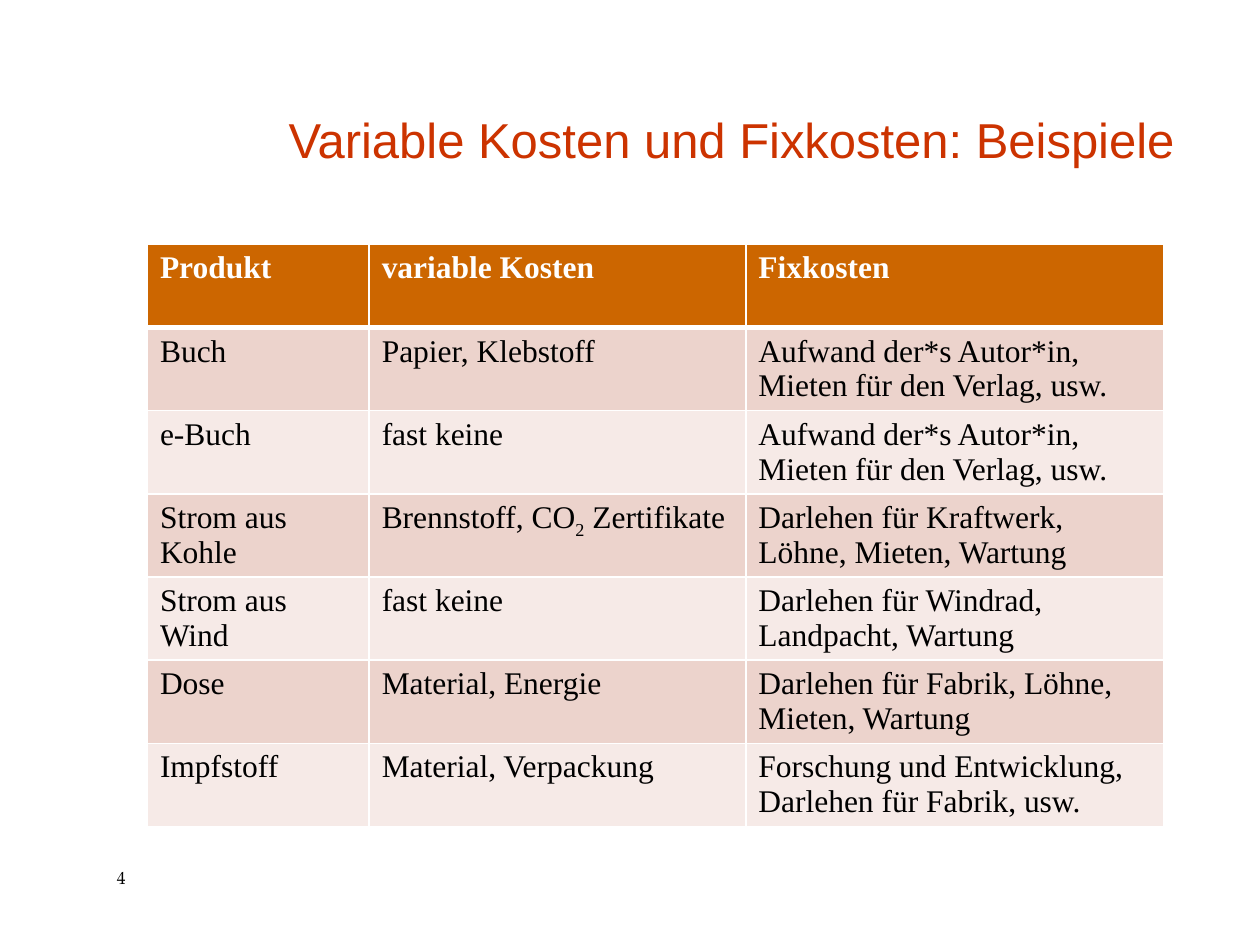
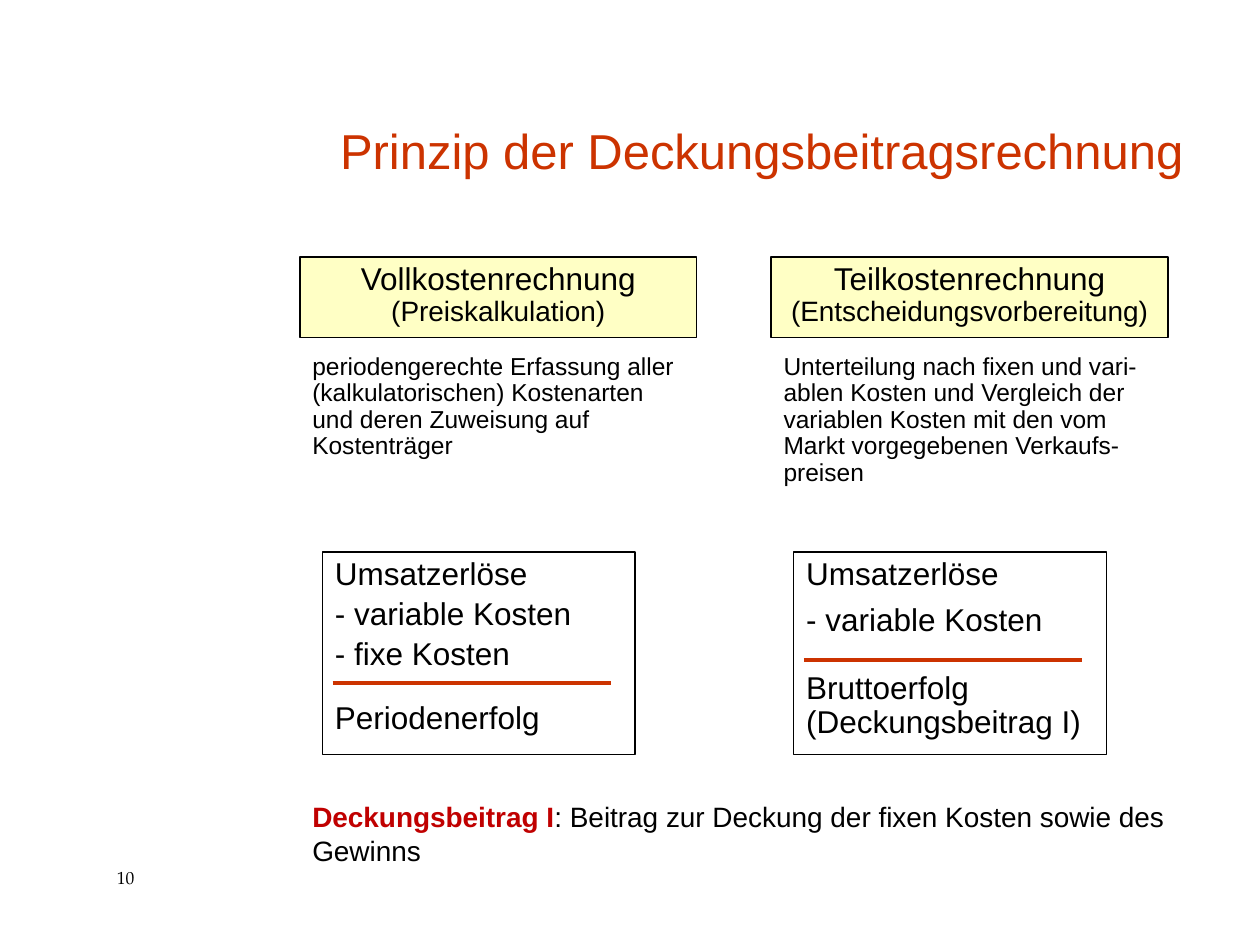
from lxml import etree
from pptx import Presentation
from pptx.dml.color import RGBColor
from pptx.enum.shapes import MSO_CONNECTOR, MSO_SHAPE
from pptx.enum.text import MSO_ANCHOR, MSO_AUTO_SIZE, PP_ALIGN
from pptx.oxml.ns import qn
from pptx.util import Inches, Pt

LEFT, CENTER, RIGHT = PP_ALIGN.LEFT, PP_ALIGN.CENTER, PP_ALIGN.RIGHT
TOP, BOTTOM = MSO_ANCHOR.TOP, MSO_ANCHOR.BOTTOM

SANS, SERIF, NUMBER_FONT = "Arial", "Times New Roman", "TeX Gyre Pagella"
BLACK, WHITE, ACCENT, KEYWORD = "000000", "FFFFFF", "CC3300", "C00000"
HEADER_FILL, BAND_FILLS, HEADING_FILL = "CC6600", ("ECD3CC", "F6EAE7"), "FFFFC5"

# Slide 1: cost examples; a cell is a string or a list of (text, is subscript)
COST_TITLE = "Variable Kosten und Fixkosten: Beispiele"
COST_COLUMNS = [1.76, 2.99, 3.32]
COST_ROW_HEIGHT = 0.66
COST_ROWS = [
    ("Produkt", "variable Kosten", "Fixkosten"),
    ("Buch", "Papier, Klebstoff", "Aufwand der*s Autor*in, Mieten für den Verlag, usw."),
    ("e-Buch", "fast keine", "Aufwand der*s Autor*in, Mieten für den Verlag, usw."),
    ("Strom aus Kohle", [("Brennstoff, CO", False), ("2", True), (" Zertifikate", False)],
     "Darlehen für Kraftwerk, Löhne, Mieten, Wartung"),
    ("Strom aus Wind", "fast keine", "Darlehen für Windrad, Landpacht, Wartung"),
    ("Dose", "Material, Energie", "Darlehen für Fabrik, Löhne, Mieten, Wartung"),
    ("Impfstoff", "Material, Verpackung", "Forschung und Entwicklung, Darlehen für Fabrik, usw."),
]

# Slide 2: two accounting methods side by side; steps are (text, space before in points)
METHOD_TITLE = "Prinzip der Deckungsbeitragsrechnung"
METHODS = [
    {"name": "Vollkostenrechnung", "purpose": "(Preiskalkulation)",
     "description": "periodengerechte Erfassung aller (kalkulatorischen) Kostenarten "
                    "und deren Zuweisung auf Kostenträger",
     "steps": [("Umsatzerlöse", 0), ("- variable Kosten", 3.6), ("- fixe Kosten", 3.6),
               ("Periodenerfolg", 16.6)],
     "rule_top": 5.42},
    {"name": "Teilkostenrechnung", "purpose": "(Entscheidungsvorbereitung)",
     "description": "Unterteilung nach fixen und vari-ablen Kosten und Vergleich der "
                    "variablen Kosten mit den vom Markt vorgegebenen Verkaufs-preisen",
     "steps": [("Umsatzerlöse", 0), ("- variable Kosten", 7.2),
               ("Bruttoerfolg (Deckungsbeitrag I)", 18.9)],
     "rule_top": 5.24},
]
METHOD_LEFT, METHOD_PITCH, METHOD_WIDTH = 2.38, 3.74, 3.15
DEFINITION = ("Deckungsbeitrag I", ": Beitrag zur Deckung der fixen Kosten sowie des Gewinns")


def rgb(color):
    return RGBColor.from_string(color)


def add_span(para, text, size, font=SANS, color=BLACK, bold=False):
    span = para.add_run()
    span.text = text
    span.font.size = Pt(size)
    span.font.name = font
    span.font.bold = bold
    span.font.color.rgb = rgb(color)
    return span


def place(shape, left, top, width, height):
    shape.left, shape.top = Inches(left), Inches(top)
    shape.width, shape.height = Inches(width), Inches(height)


def prepare_frame(shape, anchor=TOP):
    frame = shape.text_frame
    frame.word_wrap = True
    frame.auto_size = MSO_AUTO_SIZE.NONE
    frame.vertical_anchor = anchor
    return frame


def style_para(para, align=LEFT, before=0, spacing=0.9):
    para.alignment = align
    para.line_spacing = spacing
    para.space_before = Pt(before)
    return para


def add_text_box(page, left, top, width, height):
    """Add a wrapping text box and return its first paragraph."""
    box = page.shapes.add_textbox(*map(Inches, (left, top, width, height)))
    return prepare_frame(box).paragraphs[0]


def add_outlined_box(page, left, top, width, height, fill=None):
    """Add a thin black rectangle and return its text frame."""
    box = page.shapes.add_shape(MSO_SHAPE.RECTANGLE, *map(Inches, (left, top, width, height)))
    box.shadow.inherit = False
    if fill:
        box.fill.solid()
        box.fill.fore_color.rgb = rgb(fill)
    else:
        box.fill.background()
    box.line.color.rgb = rgb(BLACK)
    box.line.width = Pt(0.75)
    return prepare_frame(box)


def add_rule(page, left, top, width):
    rule = page.shapes.add_connector(
        MSO_CONNECTOR.STRAIGHT, *map(Inches, (left, top, left + width, top)))
    rule.line.color.rgb = rgb(ACCENT)
    rule.line.width = Pt(2)
    etree.SubElement(rule._element.spPr, qn("a:effectLst"))


def add_page(deck, title, number, title_width, title_height):
    """Add a slide with the shared title style and page number."""
    page = deck.slides.add_slide(deck.slide_layouts[5])
    heading = page.shapes.title
    place(heading, 2.09, 0.42, title_width, title_height)
    para = prepare_frame(heading, BOTTOM).paragraphs[0]
    para.alignment = RIGHT
    add_span(para, title, 28, color=ACCENT)
    add_span(add_text_box(page, 0.83, 6.83, 0.67, 0.29), str(number), 10, NUMBER_FONT)
    return page


def set_borders(cell, bottom_width):
    properties = cell._tc.get_or_add_tcPr()
    widths = {"lnL": 0.96, "lnR": 0.96, "lnT": 0.96, "lnB": bottom_width}
    for position, (side, width) in enumerate(widths.items()):
        line = etree.Element(qn(f"a:{side}"), w=str(Pt(width)))
        fill = etree.SubElement(line, qn("a:solidFill"))
        etree.SubElement(fill, qn("a:srgbClr"), val=WHITE)
        properties.insert(position, line)


def add_cost_table(page):
    size = sum(COST_COLUMNS), COST_ROW_HEIGHT * len(COST_ROWS)
    table = page.shapes.add_table(len(COST_ROWS), len(COST_COLUMNS),
                                  *map(Inches, (1.17, 1.94, *size))).table
    for column, width in zip(table.columns, COST_COLUMNS):
        column.width = Inches(width)
    for row_index, row in enumerate(COST_ROWS):
        is_header = row_index == 0
        fill = HEADER_FILL if is_header else BAND_FILLS[(row_index - 1) % 2]
        for column_index, content in enumerate(row):
            cell = table.cell(row_index, column_index)
            cell.fill.solid()
            cell.fill.fore_color.rgb = rgb(fill)
            set_borders(cell, 3 if is_header else 0.96)
            pieces = [(content, False)] if isinstance(content, str) else content
            for text, is_subscript in pieces:
                span = add_span(cell.text_frame.paragraphs[0], text, 18, SERIF,
                                WHITE if is_header else BLACK, is_header)
                if is_subscript:
                    span.font._element.set("baseline", "-25000")


def add_method(page, method, left):
    heading = add_outlined_box(page, left, 2.04, METHOD_WIDTH, 0.64, HEADING_FILL)
    para = style_para(heading.paragraphs[0], CENTER)
    add_span(para, method["name"], 18)
    para.add_line_break()
    add_span(para, method["purpose"], 16)

    para = style_para(add_text_box(page, left, 2.76, METHOD_WIDTH, 1.51))
    add_span(para, method["description"], 14)

    scheme = add_outlined_box(page, left + 0.18, 4.38, 2.48, 1.61)
    for index, (text, before) in enumerate(method["steps"]):
        para = scheme.add_paragraph() if index else scheme.paragraphs[0]
        add_span(style_para(para, before=before), text, 18)
    add_rule(page, left + 0.26, method["rule_top"], 2.21)


def main():
    deck = Presentation()
    deck.slide_width, deck.slide_height = Inches(10), Inches(7.5)

    add_cost_table(add_page(deck, COST_TITLE, 4, 7.33, 0.97))

    page = add_page(deck, METHOD_TITLE, 10, 7.4, 1.05)
    for index, method in enumerate(METHODS):
        add_method(page, method, METHOD_LEFT + index * METHOD_PITCH)
    para = add_text_box(page, METHOD_LEFT, 6.3, 7.21, 0.63)
    term, meaning = DEFINITION
    add_span(para, term, 16, color=KEYWORD, bold=True)
    add_span(para, meaning, 16)

    deck.save("out.pptx")


if __name__ == "__main__":
    main()
